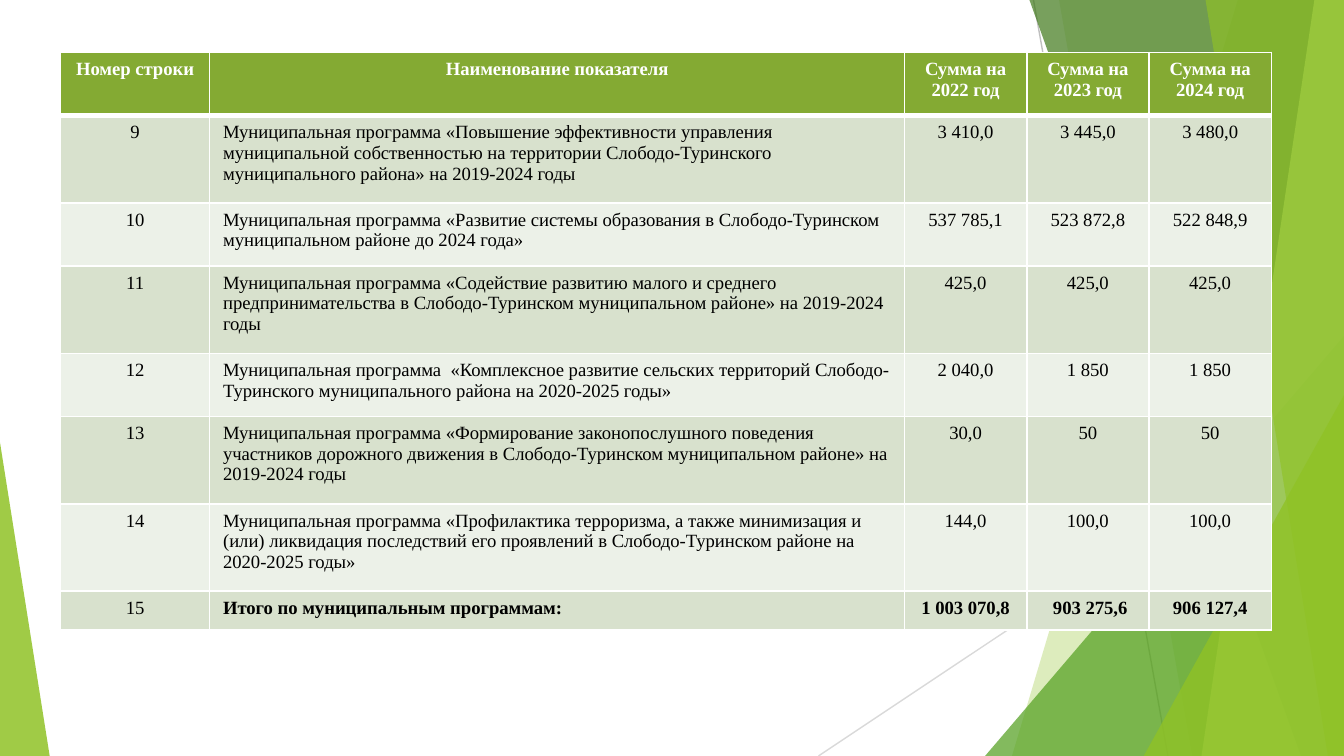
from lxml.etree import SubElement
from pptx import Presentation
from pptx.dml.color import RGBColor
from pptx.enum.shapes import MSO_CONNECTOR, MSO_SHAPE
from pptx.enum.text import PP_ALIGN
from pptx.oxml.ns import qn
from pptx.util import Inches, Pt

WIDTH = 10
HEIGHT = WIDTH * 9 / 16
FONT = "Times New Roman"

WHITE = RGBColor(0xFF, 0xFF, 0xFF)
BLACK = RGBColor(0, 0, 0)
GREY = RGBColor(0xBF, 0xBF, 0xBF)
LIGHT_GREY = RGBColor(0xD9, 0xD9, 0xD9)
LIME = RGBColor(0x90, 0xC2, 0x26)
GREEN = RGBColor(0x54, 0xA0, 0x21)
DARK_GREEN = RGBColor(0x3F, 0x78, 0x19)
PALE_LIME = RGBColor(0xC0, 0xE4, 0x74)
HEADER = RGBColor(0x84, 0xAA, 0x33)
BANDS = (RGBColor(0xD8, 0xE1, 0xCD), RGBColor(0xEC, 0xF1, 0xE8))

COLUMNS = [1.11, 5.17, 0.91, 0.91, 0.91]
ROW_HEIGHTS = [0.47, 0.65, 0.47, 0.65, 0.47, 0.65, 0.65, 0.29]
ROWS = [
    ["Номер строки", "Наименование показателя"]
    + [f"Сумма на {year} год" for year in (2022, 2023, 2024)],
    ["9", "Муниципальная программа «Повышение эффективности управления "
     "муниципальной собственностью на территории Слободо-Туринского "
     "муниципального района» на 2019-2024 годы",
     "3 410,0", "3 445,0", "3 480,0"],
    ["10", "Муниципальная программа «Развитие системы образования в "
     "Слободо-Туринском муниципальном районе до 2024 года»",
     "537 785,1", "523 872,8", "522 848,9"],
    ["11", "Муниципальная программа «Содействие развитию малого и среднего "
     "предпринимательства в Слободо-Туринском муниципальном районе» "
     "на 2019-2024 годы",
     "425,0", "425,0", "425,0"],
    ["12", "Муниципальная программа  «Комплексное развитие сельских "
     "территорий Слободо-Туринского муниципального района "
     "на 2020-2025 годы»",
     "2 040,0", "1 850", "1 850"],
    ["13", "Муниципальная программа «Формирование законопослушного поведения "
     "участников дорожного движения в Слободо-Туринском муниципальном "
     "районе» на 2019-2024 годы",
     "30,0", "50", "50"],
    ["14", "Муниципальная программа «Профилактика терроризма, а также "
     "минимизация и (или) ликвидация последствий его проявлений в "
     "Слободо-Туринском районе на 2020-2025 годы»",
     "144,0", "100,0", "100,0"],
    ["15", "Итого по муниципальным программам:",
     "1 003 070,8", " 903 275,6", "906 127,4"],
]


def write_text(frame, text, color=BLACK, bold=False, align=PP_ALIGN.LEFT):
    para = frame.paragraphs[0]
    para.alignment = align
    span = para.add_run()
    span.text = text
    span.font.name = FONT
    span.font.size = Pt(10)
    span.font.bold = bold
    span.font.color.rgb = color


class SlideBuilder:
    """Holds the current page and draws its elements."""

    def __init__(self, page):
        self.page = page

    def line(self, start, end, color):
        points = [Inches(value) for value in start + end]
        line = self.page.shapes.add_connector(MSO_CONNECTOR.STRAIGHT, *points)
        line.line.color.rgb = color
        line.line.width = Pt(0.75)
        SubElement(line._element.spPr, qn("a:effectLst"))

    def paint(self, shape, color, opacity):
        shape.shadow.inherit = False
        shape.line.fill.background()
        shape.fill.solid()
        shape.fill.fore_color.rgb = color
        tint = shape._element.spPr.find(".//" + qn("a:srgbClr"))
        SubElement(tint, qn("a:alpha"), val=str(opacity * 1000))

    def panel(self, top_x, bottom_x, color, opacity):
        """Fill from a slanted left edge to the right side of the page."""
        corners = [(WIDTH, 0), (WIDTH, HEIGHT), (bottom_x, HEIGHT)]
        outline = self.page.shapes.build_freeform(Inches(top_x), 0)
        outline.add_line_segments([(Inches(x), Inches(y)) for x, y in corners])
        self.paint(outline.convert_to_shape(), color, opacity)

    def triangle(self, left, top, width, apex, color, opacity):
        """Triangle standing on the bottom edge of the page."""
        shape = self.page.shapes.add_shape(
            MSO_SHAPE.ISOSCELES_TRIANGLE, Inches(left), Inches(top),
            Inches(width), Inches(HEIGHT - top))
        shape.adjustments[0] = apex
        self.paint(shape, color, opacity)

    def borders(self, cell, **widths):
        properties = cell._tc.get_or_add_tcPr()
        for index, (side, width) in enumerate(widths.items()):
            edge = SubElement(properties, qn(f"a:ln{side}"), w=str(Pt(width)))
            fill = SubElement(edge, qn("a:solidFill"))
            SubElement(fill, qn("a:srgbClr"), val=str(WHITE))
            properties.insert(index, edge)

    def table(self, left, top, rows, columns, heights):
        frame = self.page.shapes.add_table(
            len(rows), len(columns), Inches(left), Inches(top),
            Inches(sum(columns)), Inches(sum(heights)))
        table = frame.table
        for column, width in zip(table.columns, columns):
            column.width = Inches(width)
        for row, height in zip(table.rows, heights):
            row.height = Inches(height)
        last = len(rows) - 1
        for r, texts in enumerate(rows):
            for c, text in enumerate(texts):
                cell = table.cell(r, c)
                header = r == 0
                cell.fill.solid()
                cell.fill.fore_color.rgb = HEADER if header else BANDS[(r - 1) % 2]
                write_text(
                    cell.text_frame, text,
                    color=WHITE if header else BLACK,
                    bold=header or (r == last and c > 0),
                    align=PP_ALIGN.LEFT if c == 1 and not header
                    else PP_ALIGN.CENTER)
                self.borders(cell, L=0.96, R=0.96, T=3 if r == 1 else 0.96,
                             B=3 if header else 0.96)


def main():
    deck = Presentation()
    deck.slide_width, deck.slide_height = Inches(WIDTH), Inches(HEIGHT)
    builder = SlideBuilder(deck.slides.add_slide(deck.slide_layouts[6]))

    # Background facets
    builder.line((7.69, 0), (8.69, HEIGHT), GREY)
    builder.line((WIDTH, 3.02), (6.09, HEIGHT), LIGHT_GREY)
    builder.panel(9.21, 7.53, LIME, 30)
    builder.panel(7.88, 8.87, LIME, 20)
    builder.triangle(7.33, 2.5, 2.67, 1, GREEN, 72)
    builder.panel(7.66, 9.68, DARK_GREEN, 70)
    builder.panel(9.78, 8.94, PALE_LIME, 70)
    builder.panel(8.97, 9.88, LIME, 65)
    builder.triangle(8.51, 2.94, 1.49, 1, LIME, 80)
    builder.triangle(0, 3.29, 0.37, 0, LIME, 85)

    # Programme budget table
    builder.table(0.45, 0.39, ROWS, COLUMNS, ROW_HEIGHTS)

    deck.save("out.pptx")


if __name__ == "__main__":
    main()
